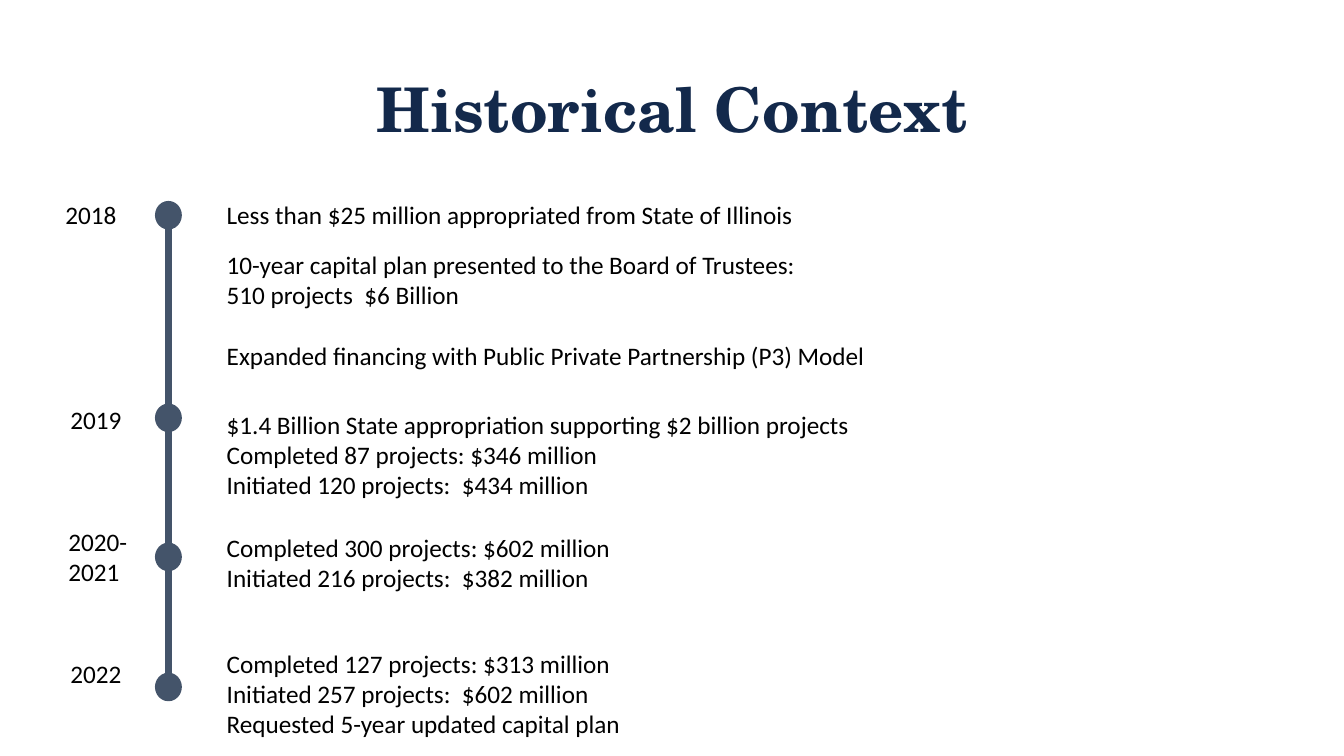
"""Build the Historical Context timeline slide."""
import pptx
import pptx.dml.color
import pptx.enum.shapes
import pptx.enum.text
import pptx.oxml.ns
import pptx.util
from lxml import etree

SLIDE_WIDTH = pptx.util.Inches(13.33)
SLIDE_HEIGHT = pptx.util.Inches(7.5)
COLOURS = {"title": "13294B", "timeline": "44546A", "body": "000000"}
AXIS_X = 12.53
DOT_WIDTH, DOT_HEIGHT = 1.9, 3.6
YEAR_WIDTH = 6.9
EVENT_X = 16.13

YEARS = [
    ("2018", 4.13, 25.73, 5.33),
    ("2019", 4.5, 52.8, 5.33),
    ("2020-2021", 4.35, 68.93, 9.47),
    ("2022", 4.5, 86.4, 5.33),
]
DOT_TOPS = [26.67, 53.47, 71.87, 89.07]
EVENTS = [
    (["Less than $25 million appropriated from State of Illinois"],
     25.73, 47.7, 5.33, 0),
    (["10-year capital plan presented to the Board of Trustees:\n510 projects  $6 Billion",
      "Expanded financing with Public Private Partnership (P3) Model"],
     32.27, 52.9, 17.47, 22),
    (["$1.4 Billion State appropriation supporting $2 billion projects",
      "Completed 87 projects: $346 million\nInitiated 120 projects:  $434 million"],
     53.47, 48.75, 13.47, 0),
    (["Completed 300 projects: $602 million\nInitiated 216 projects:  $382 million"],
     69.73, 30.4, 9.47, 0),
    (["Completed 127 projects: $313 million\nInitiated 257 projects:  $602 million\n"
      "Requested 5-year updated capital plan"],
     85.07, 31.15, 13.47, 0),
]


def across(percent):
    """Convert a percentage of the slide width to a length."""
    return round(SLIDE_WIDTH * percent / 100)


def down(percent):
    """Convert a percentage of the slide height to a length."""
    return round(SLIDE_HEIGHT * percent / 100)


def colour(name):
    """Look up a named colour."""
    return pptx.dml.color.RGBColor.from_string(COLOURS[name])


def add_text(slide, paragraphs, left, top, width, height, *, size=18, font="Calibri",
             ink="body", bold=False, align="LEFT", line_spacing=1.0, gap=0, grow=True):
    """Add a text box holding the given paragraphs in one format."""
    box = slide.shapes.add_textbox(across(left), down(top), across(width), down(height))
    frame = box.text_frame
    frame.word_wrap = True
    fit = pptx.enum.text.MSO_AUTO_SIZE
    frame.auto_size = fit.SHAPE_TO_FIT_TEXT if grow else fit.NONE
    for index, wording in enumerate(paragraphs):
        paragraph = frame.add_paragraph() if index else frame.paragraphs[0]
        paragraph.text = wording
        paragraph.alignment = getattr(pptx.enum.text.PP_ALIGN, align)
        paragraph.line_spacing = line_spacing
        if index and gap:
            paragraph.space_before = pptx.util.Pt(gap)
        for run in paragraph.runs:
            run.font.size = pptx.util.Pt(size)
            run.font.name = font
            run.font.bold = bold
            run.font.color.rgb = colour(ink)


def add_axis(slide, top, bottom):
    """Draw the vertical timeline axis."""
    axis = slide.shapes.add_connector(
        pptx.enum.shapes.MSO_CONNECTOR.STRAIGHT,
        across(AXIS_X), down(top), across(AXIS_X), down(bottom))
    axis.line.color.rgb = colour("timeline")
    axis.line.width = pptx.util.Pt(4.5)
    etree.SubElement(axis._element.spPr, pptx.oxml.ns.qn("a:effectLst"))


def add_dot(slide, top):
    """Draw a milestone dot centred on the axis."""
    dot = slide.shapes.add_shape(
        pptx.enum.shapes.MSO_SHAPE.OVAL, across(AXIS_X - DOT_WIDTH / 2), down(top),
        across(DOT_WIDTH), down(DOT_HEIGHT))
    dot.shadow.inherit = False
    dot.fill.solid()
    dot.fill.fore_color.rgb = colour("timeline")
    dot.line.color.rgb = colour("timeline")
    dot.line.width = pptx.util.Pt(1)


def main():
    """Assemble and save the slide."""
    deck = pptx.Presentation()
    deck.slide_width, deck.slide_height = SLIDE_WIDTH, SLIDE_HEIGHT
    slide = deck.slides.add_slide(deck.slide_layouts[6])
    add_text(slide, ["Historical Context"], 6.9, 9.87, 86.27, 19.2, size=44,
             font="TeX Gyre Schola", ink="title", bold=True, align="CENTER",
             line_spacing=0.9, grow=False)
    add_axis(slide, 27.47, 91.73)
    for top in DOT_TOPS:
        add_dot(slide, top)
    for year, left, top, height in YEARS:
        add_text(slide, [year], left, top, YEAR_WIDTH, height)
    for paragraphs, top, width, height, gap in EVENTS:
        add_text(slide, paragraphs, EVENT_X, top, width, height, gap=gap)
    deck.save("out.pptx")


if __name__ == "__main__":
    main()
